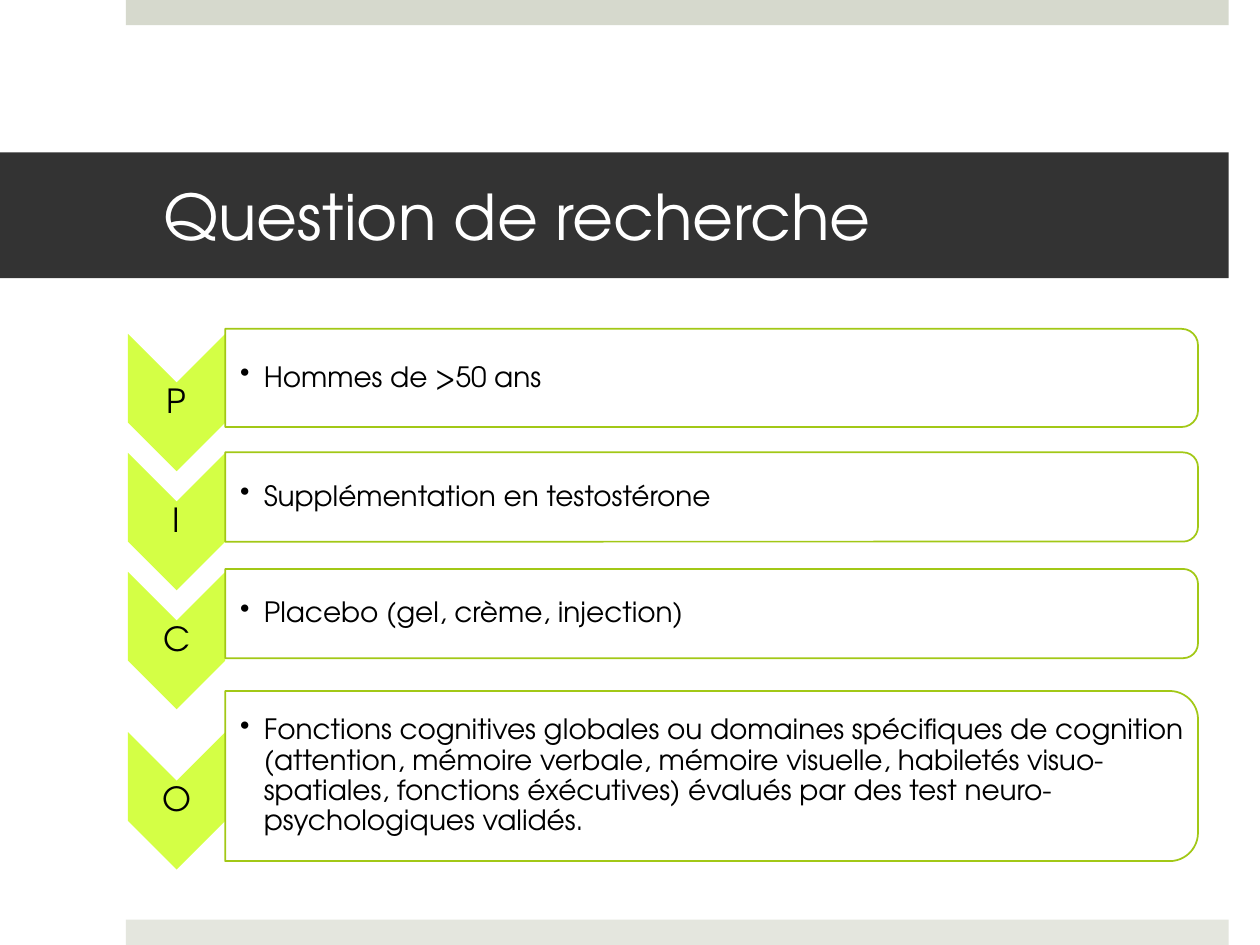
from dataclasses import dataclass

from lxml.etree import SubElement
from pptx import Presentation
from pptx.dml.color import RGBColor
from pptx.enum.shapes import MSO_SHAPE as Shape
from pptx.enum.text import MSO_ANCHOR as Anchor, MSO_AUTO_SIZE as AutoSize, PP_ALIGN as Align
from pptx.oxml.ns import qn
from pptx.util import Cm, Pt

FONT = "TeX Gyre Adventor"
DARK, WHITE, BLACK = "333333", "FFFFFF", "000000"
LIME, GREEN = "D4FF45", "A2C816"

CHEVRON_LEFT, CHEVRON_WIDTH, CHEVRON_HEIGHT = 2.58, 1.96, 2.77
CARD_LEFT, CARD_WIDTH = 4.54, 19.61
LETTER_HEIGHT = 0.84


@dataclass
class Box:
    left: float
    top: float
    width: float
    height: float

    def lengths(self):
        return Cm(self.left), Cm(self.top), Cm(self.width), Cm(self.height)

    def before_quarter_turn(self):
        shift = (self.width - self.height) / 2
        return Box(self.left + shift, self.top - shift, self.height, self.width)


@dataclass
class Row:
    letter: str
    text: str
    chevron_top: float
    card_top: float
    card_height: float


ROWS = [
    Row("P", "Hommes de >50 ans", 6.73, 6.63, 1.98),
    Row("I", "Supplémentation en testostérone", 9.13, 9.12, 1.8),
    Row("C", "Placebo (gel, crème, injection)", 11.53, 11.47, 1.8),
    Row("O", "Fonctions cognitives globales ou domaines spécifiques de cognition "
        "(attention, mémoire verbale, mémoire visuelle, habiletés visuo-spatiales, "
        "fonctions éxécutives) évalués par des test neuro-psychologiques validés.",
        14.76, 13.93, 3.43),
]


def color(value: str) -> RGBColor:
    return RGBColor.from_string(value)


def paint(sp, fill: str, line: str = "") -> None:
    sp.fill.solid()
    sp.fill.fore_color.rgb = color(fill)
    if line:
        sp.line.color.rgb = color(line)
        sp.line.width = Pt(1)
    else:
        sp.line.fill.background()


def add_shape(s, kind, box: Box, fill: str, line: str = "", turned: bool = False):
    placed = box.before_quarter_turn() if turned else box
    sp = s.shapes.add_shape(kind, *placed.lengths())
    sp.shadow.inherit = False
    sp.rotation = 90 if turned else 0
    paint(sp, fill, line)
    return sp


def write(sp, text: str, size: float, ink: str, align, margins: tuple):
    tf = sp.text_frame
    tf.word_wrap = True
    tf.auto_size = AutoSize.NONE
    tf.vertical_anchor = Anchor.MIDDLE
    tf.margin_left, tf.margin_top, tf.margin_right, tf.margin_bottom = map(Cm, margins)
    p = tf.paragraphs[0]
    p.alignment = align
    r = p.add_run()
    r.text = text
    r.font.name = FONT
    r.font.size = Pt(size)
    r.font.color.rgb = color(ink)
    return p


def add_bullet(p, indent: float) -> None:
    pPr = p._p.get_or_add_pPr()
    pPr.set("marL", str(Cm(indent)))
    pPr.set("indent", str(-Cm(indent)))
    SubElement(pPr, qn("a:buChar"), char="•")


def add_title(s, text: str) -> None:
    sp = s.shapes.title
    sp.left, sp.top, sp.width, sp.height = Box(0, 3.07, 24.77, 2.54).lengths()
    paint(sp, DARK)
    write(sp, text, 36, WHITE, Align.LEFT, (3.3, 0.13, 0.76, 0.13))


def add_row(s, row: Row) -> None:
    chevron = Box(CHEVRON_LEFT, row.chevron_top, CHEVRON_WIDTH, CHEVRON_HEIGHT)
    add_shape(s, Shape.CHEVRON, chevron, LIME, turned=True)
    letter_top = row.chevron_top + (CHEVRON_HEIGHT - LETTER_HEIGHT) / 2
    letter = Box(CHEVRON_LEFT, letter_top, CHEVRON_WIDTH, LETTER_HEIGHT)
    sp = s.shapes.add_textbox(*letter.lengths())
    p = write(sp, row.letter, 19, BLACK, Align.CENTER, (0.03,) * 4)
    p.line_spacing = 0.9

    card = Box(CARD_LEFT, row.card_top, CARD_WIDTH, row.card_height)
    add_shape(s, Shape.ROUND_2_SAME_RECTANGLE, card, WHITE, GREEN, turned=True)
    corner = row.card_height * 0.05
    body = Box(CARD_LEFT, row.card_top + corner, CARD_WIDTH - corner, row.card_height - 2 * corner)
    sp = s.shapes.add_textbox(*body.lengths())
    p = write(sp, row.text, 16, BLACK, Align.LEFT, (0.3, 0.03, 0.03, 0.03))
    p.line_spacing = 0.9
    add_bullet(p, 0.48)


def main() -> None:
    prs = Presentation()
    prs.slide_width, prs.slide_height = Cm(25.4), Cm(19.05)
    s = prs.slides.add_slide(prs.slide_layouts[5])
    add_shape(s, Shape.RECTANGLE, Box(2.54, 0, 22.23, 0.51), "D6D9CD")
    add_shape(s, Shape.RECTANGLE, Box(2.54, 18.54, 22.23, 0.51), "E4E6DE")
    add_title(s, "Question de recherche")
    for row in ROWS:
        add_row(s, row)
    prs.save("out.pptx")


if __name__ == "__main__":
    main()
